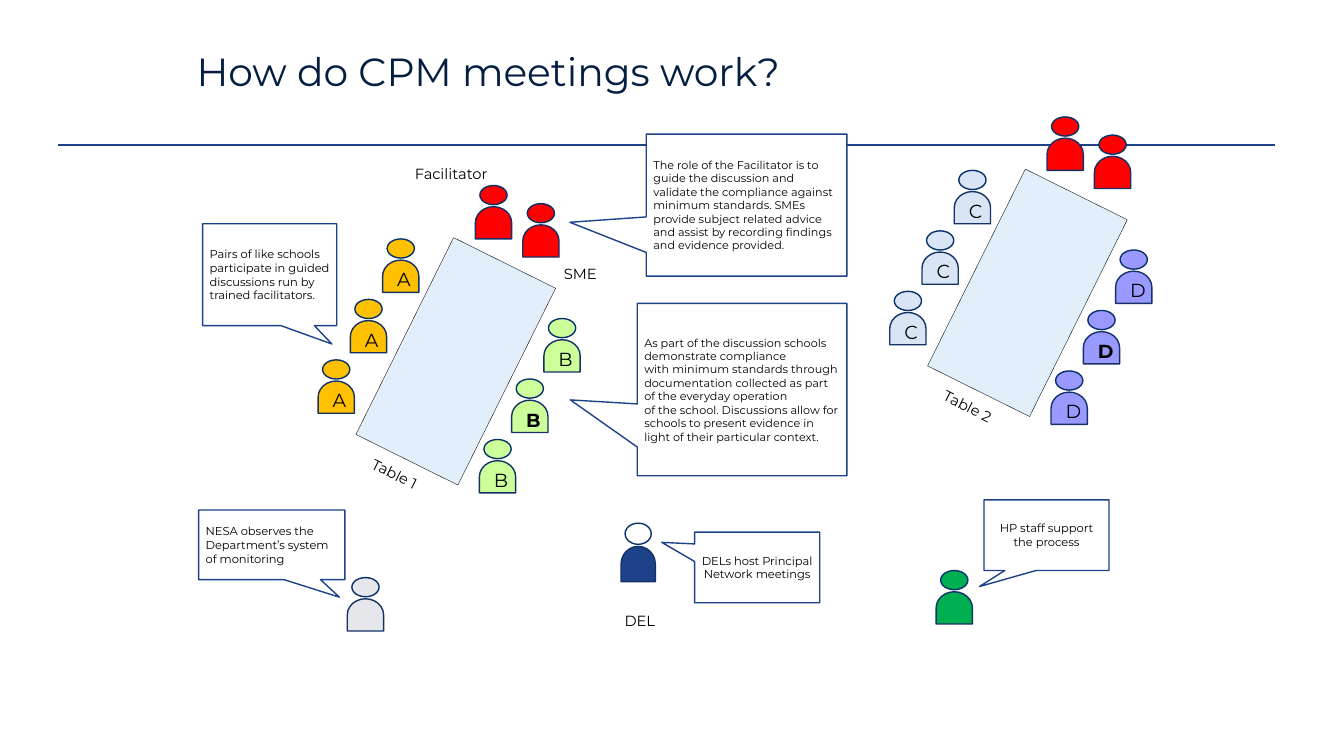
from pptx import Presentation
from pptx.dml.color import RGBColor
from pptx.enum.shapes import MSO_CONNECTOR, MSO_SHAPE
from pptx.enum.text import MSO_ANCHOR, PP_ALIGN
from pptx.oxml.ns import qn
from pptx.util import Inches, Pt
from lxml import etree

FONT = "Montserrat"
BLUE = "1D428A"
RED = "FF0000"
BLACK = "000000"
TABLE_TILT = 116.4
LABEL_TILT = 26.8
# Neighbouring seats along a tilted table
SEAT_STEP = (0.32, -0.6)


def color(hex_string):
    return RGBColor.from_string(hex_string)


def write_text(shape, *paragraphs, size, ink=BLACK, bold=False, align=PP_ALIGN.LEFT,
               anchor=MSO_ANCHOR.TOP, insets=(0, 0), wrap=True, spacing=None):
    frame = shape.text_frame
    frame.word_wrap = wrap
    frame.vertical_anchor = anchor
    frame.margin_left = frame.margin_right = Inches(insets[0])
    frame.margin_top = frame.margin_bottom = Inches(insets[1])
    for index, text in enumerate(paragraphs):
        paragraph = frame.add_paragraph() if index else frame.paragraphs[0]
        paragraph.alignment = align
        if spacing:
            paragraph.line_spacing = spacing
        run = paragraph.add_run()
        run.text = text
        run.font.name = FONT
        run.font.size = Pt(size)
        run.font.bold = bold
        run.font.color.rgb = color(ink)


def add_title(slide, text):
    title = slide.shapes.title
    title.left, title.top = Inches(1.95), Inches(0.53)
    title.width, title.height = Inches(9.43), Inches(0.41)
    write_text(title, text, size=28, ink="041E42", anchor=MSO_ANCHOR.MIDDLE, spacing=0.9)


def add_rule(slide, left, right, top):
    rule = slide.shapes.add_connector(MSO_CONNECTOR.STRAIGHT, Inches(left), Inches(top),
                                      Inches(right), Inches(top))
    rule.line.color.rgb = color(BLUE)
    rule.line.width = Pt(1)
    etree.SubElement(rule.element.spPr, qn("a:effectLst"))


def add_figure(shapes, kind, left, top, width, height, fill, line, line_width=1, rotation=0):
    shape = shapes.add_shape(kind, Inches(left), Inches(top), Inches(width), Inches(height))
    shape.shadow.inherit = False
    shape.fill.solid()
    shape.fill.fore_color.rgb = color(fill)
    shape.line.color.rgb = color(line)
    shape.line.width = Pt(line_width)
    shape.rotation = rotation
    return shape


def add_label(slide, text, left, top, width, height, rotation=0, **text_format):
    box = slide.shapes.add_textbox(Inches(left), Inches(top), Inches(width), Inches(height))
    box.rotation = rotation
    write_text(box, text, **{"size": 10.5, **text_format})


def add_callout(slide, paragraphs, left, top, width, height, tip, size=8.2, align=PP_ALIGN.LEFT):
    callout = add_figure(slide.shapes, MSO_SHAPE.RECTANGULAR_CALLOUT,
                         left, top, width, height, "FFFFFF", BLUE)
    callout.adjustments[0], callout.adjustments[1] = tip
    write_text(callout, *paragraphs, size=size, align=align,
               anchor=MSO_ANCHOR.MIDDLE, insets=(0.07, 0.04))


def add_person(slide, left, top, fill, head_fill=None, head=(0.27, 0.19), body=(0.36, 0.32)):
    person = slide.shapes.add_group_shape()
    body_width, body_height = body
    center_x = left + head[0] / 2
    center_y = top + head[1] + 0.02 + body_height / 2
    # The body is a quarter turn, so its width and height swap
    add_figure(person.shapes, MSO_SHAPE.FLOWCHART_DELAY, center_x - body_height / 2,
               center_y - body_width / 2, body_height, body_width, fill, "153166", rotation=270)
    add_figure(person.shapes, MSO_SHAPE.FLOWCHART_CONNECTOR, left, top, *head,
               head_fill or fill, "07316B")


def add_school_row(slide, letter, left, top, fill, bold_seat=None):
    for seat in range(3):
        x, y = left + seat * SEAT_STEP[0], top + seat * SEAT_STEP[1]
        add_person(slide, x, y, fill)
        add_label(slide, letter, x, y + 0.24, 0.35, 0.33, size=13.5,
                  bold=seat == bold_seat, insets=(0.1, 0.05), wrap=False)


def add_meeting_table(slide, name, left, top, left_school, right_school):
    add_figure(slide.shapes, MSO_SHAPE.RECTANGLE, left, top, 2.18, 1.13,
               "E2EEFA", BLACK, 0.25, TABLE_TILT)
    add_label(slide, name, left + 0.23, top + 1.64, 0.69, 0.19, LABEL_TILT)
    add_school_row(slide, left_school[0], left - 0.23, top + 0.55, left_school[1])
    add_school_row(slide, right_school[0], left + 1.37, top + 1.34, right_school[1], bold_seat=1)
    # Facilitator and subject expert at the head of the table
    add_person(slide, left + 1.33, top - 1.18, RED)
    add_person(slide, left + 1.8, top - 1, RED)


def main():
    presentation = Presentation()
    presentation.slide_width, presentation.slide_height = Inches(13.33), Inches(7.5)
    slide = presentation.slides.add_slide(presentation.slide_layouts[5])

    # Heading
    add_title(slide, "How do CPM meetings work?")
    add_rule(slide, 0.58, 12.65, 1.44)

    # Meeting tables with their participants
    add_meeting_table(slide, "Table 1", 3.43, 3.02, ("A", "FFC000"), ("B", "CCFF99"))
    add_meeting_table(slide, "Table 2", 9.1, 2.34, ("C", "D9E5F4"), ("D", "9999FF"))

    # Role labels
    add_label(slide, "Facilitator", 4.05, 1.64, 0.85, 0.17, align=PP_ALIGN.CENTER)
    add_label(slide, "SME", 5.33, 2.63, 0.85, 0.17, align=PP_ALIGN.CENTER)
    add_label(slide, "DEL", 5.74, 6.07, 1.21, 0.43, align=PP_ALIGN.CENTER)

    # People outside the tables
    add_person(slide, 6.2, 5.19, BLUE, "FFFFFF", head=(0.26, 0.21), body=(0.34, 0.35))
    add_person(slide, 3.49, 5.73, "E6E7EA")
    add_person(slide, 9.33, 5.66, "00B050")

    # Explanations
    add_callout(slide, ["Pairs of like schools participate in guided discussions run by "
                        "trained facilitators."], 2.01, 2.22, 1.33, 1.01, (0.464, 0.681))
    add_callout(slide, ["The role of the Facilitator is to", "guide the discussion and",
                        "validate the compliance against minimum standards. SMEs provide "
                        "subject related advice and assist by recording findings and "
                        "evidence provided."], 6.41, 1.33, 1.99, 1.41, (-0.881, 0.121), size=8)
    add_callout(slide, ["As part of the discussion schools demonstrate compliance",
                        "with minimum standards through documentation collected as "
                        "part of the everyday operation",
                        "of the school. Discussions allow for schools to present evidence in",
                        "light of their particular context."],
                6.32, 3.01, 2.08, 1.71, (-0.819, 0.06), size=8)
    add_callout(slide, ["NESA observes the Department’s system of monitoring"],
                1.97, 5.06, 1.45, 0.69, (0.463, 0.753))
    add_callout(slide, ["DELs host Principal Network meetings"], 6.89, 5.28, 1.24, 0.7,
                (-0.763, -0.355), align=PP_ALIGN.CENTER)
    add_callout(slide, ["HP staff support the process"], 9.76, 4.96, 1.24, 0.7,
                (-0.537, 0.728), align=PP_ALIGN.CENTER)

    presentation.save("out.pptx")


if __name__ == "__main__":
    main()
